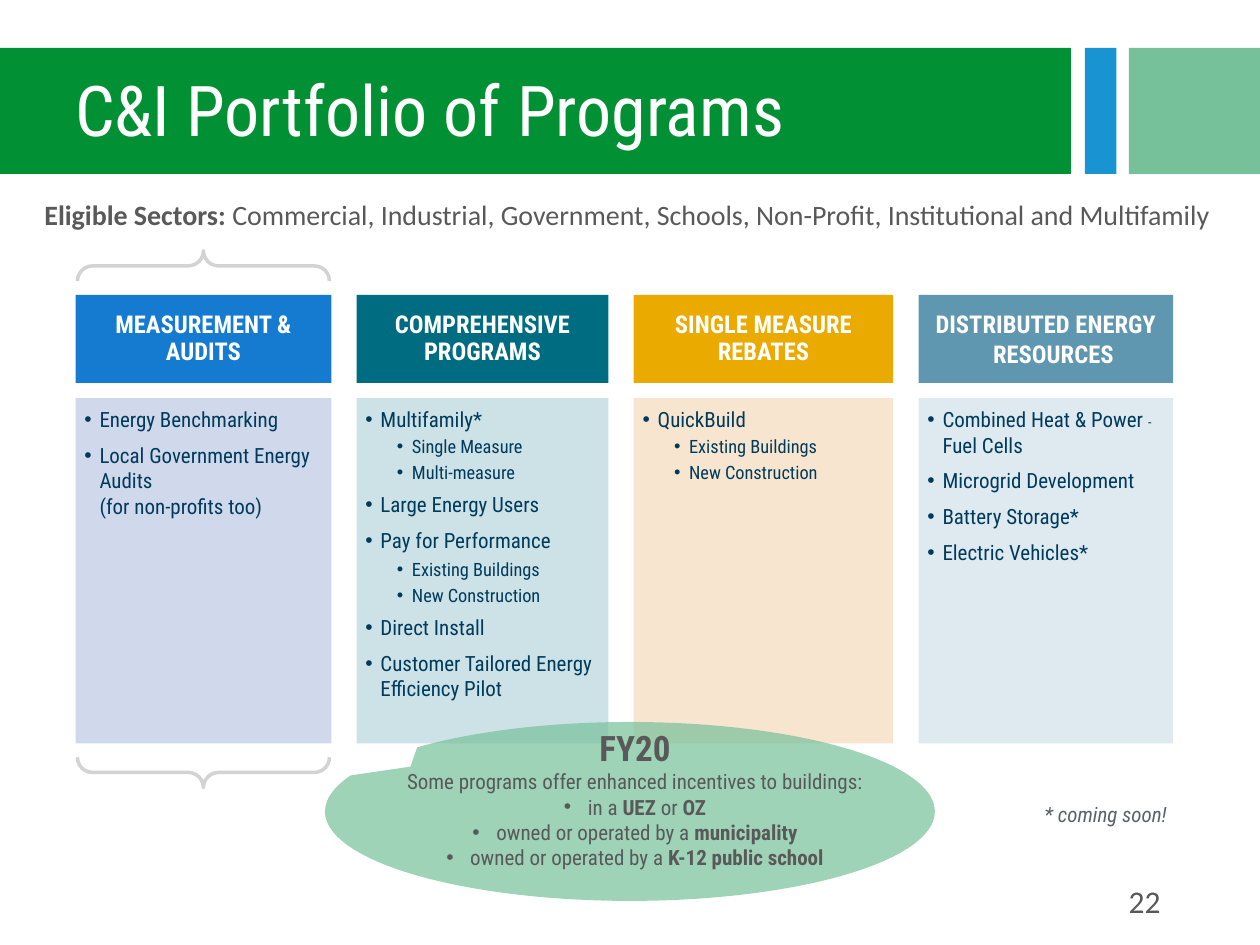
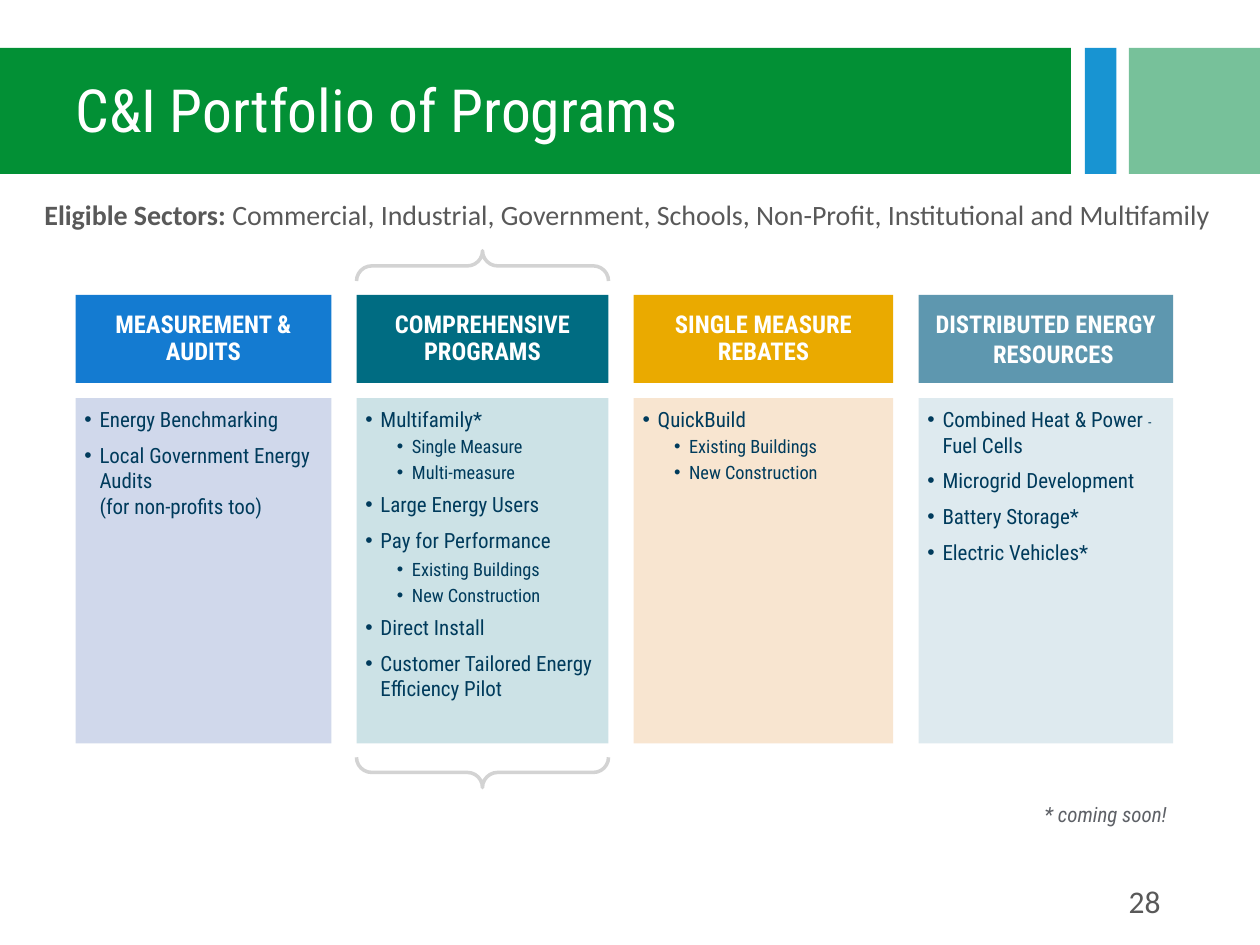
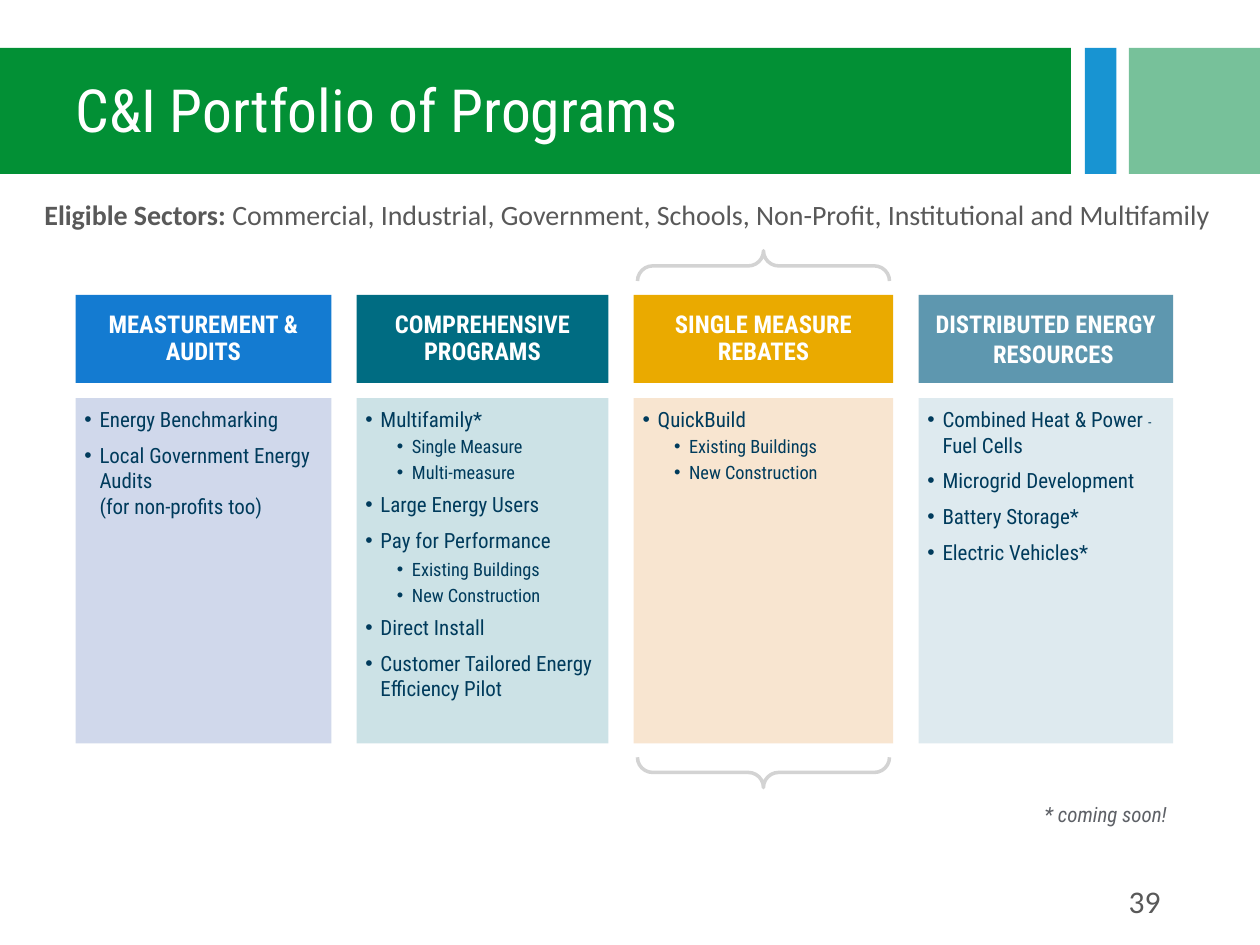
from lxml.etree import SubElement
from pptx import Presentation
from pptx.dml.color import RGBColor as RGB
from pptx.enum.shapes import MSO_SHAPE as SHAPE
from pptx.enum.text import MSO_ANCHOR as ANCHOR, PP_ALIGN as ALIGN
from pptx.oxml.ns import qn
from pptx.util import Inches, Pt

COLS, ROWS = 100, 75
COLORS = {
    "green": "029035", "blue": "1894D2", "mint": "77C19A", "white": "FFFFFF",
    "text": "595959", "note": "5E6167", "navy": "003B5C", "brace": "D3D3D3",
    "audits": "147BD1", "audits_pale": "D0D8EB",
    "programs": "006C82", "programs_pale": "CCE2E6",
    "rebates": "EAAA00", "rebates_pale": "F8E5D0",
    "energy": "5E97AF",
}
HEAD_FONT, BODY_FONT = "Roboto Condensed", "Calibri"

# Column widths in grid columns, set from the left margin with equal gaps
LEFT, GAP = 6, 2
WIDTHS = [20.3, 20, 20.6, 20.2]
LEFTS = [LEFT + sum(WIDTHS[:i]) + GAP * i for i in range(len(WIDTHS))]
HEAD_TOP, HEAD_HEIGHT = 23.4, 7
PANEL_TOP, PANEL_HEIGHT = 31.6, 27.4
BRACE_SPAN, BRACE_LENGTH = 20, 42.6

# Each item is (level, runs); a run is text or (text, format); "\n" breaks the line
HEADINGS = ["MEASUREMENT & AUDITS", "COMPREHENSIVE PROGRAMS",
            "SINGLE MEASURE REBATES", "DISTRIBUTED ENERGY RESOURCES"]
HEAD_FILLS = ["audits", "programs", "rebates", "energy"]
PANEL_FILLS = [("audits_pale", 100), ("programs_pale", 100),
               ("rebates_pale", 100), ("energy", 20)]
BUILDINGS = [(2, ["Existing Buildings"]), (2, ["New Construction"])]
PANELS = [
    [(1, ["Energy Benchmarking"]),
     (1, ["Local Government Energy Audits", "\n", "(for non-profits too)"])],
    [(1, ["Multifamily*"]), (2, ["Single Measure"]), (2, ["Multi-measure"]),
     (1, ["Large Energy Users"]), (1, ["Pay for Performance"]), *BUILDINGS,
     (1, ["Direct Install"]), (1, ["Customer Tailored Energy Efficiency Pilot"])],
    [(1, ["QuickBuild"]), *BUILDINGS],
    [(1, ["Combined Heat & Power ", ("- ", {"size": 8}), "Fuel Cells"]),
     (1, ["Microgrid Development"]), (1, ["Battery Storage*"]),
     (1, ["Electric Vehicles*"])],
]
BOLD = {"bold": True}
INCENTIVES = [
    ["in a ", ("UEZ", BOLD), " or ", ("OZ", BOLD)],
    ["owned or operated by a ", ("municipality", BOLD)],
    ["owned or operated by a ", ("K-12 public school", BOLD)],
]


class Deck:
    def __init__(self):
        self.prs = Presentation()
        self.prs.slide_width, self.prs.slide_height = Inches(10), Inches(7.5)
        self.s = None

    def new_slide(self):
        self.s = self.prs.slides.add_slide(self.prs.slide_layouts[6])

    def place(self, left, top, width, height):
        """Turn grid columns and rows into slide lengths."""
        col, row = self.prs.slide_width / COLS, self.prs.slide_height / ROWS
        return [round(n) for n in (left * col, top * row, width * col, height * row)]

    def shape(self, kind, box, fill=None, opacity=100, line=None):
        sp = self.s.shapes.add_shape(kind, *self.place(*box))
        sp.shadow.inherit = False
        if fill:
            sp.fill.solid()
            sp.fill.fore_color.rgb = RGB.from_string(COLORS[fill])
            if opacity < 100:
                clr = sp.element.spPr.find(".//" + qn("a:srgbClr"))
                SubElement(clr, qn("a:alpha"), val=str(opacity * 1000))
        else:
            sp.fill.background()
        if line:
            sp.line.color.rgb = RGB.from_string(COLORS[line])
            sp.line.width = Pt(2)
        else:
            sp.line.fill.background()
        return sp

    def frame(self, sp, anchor=ANCHOR.TOP, insets=(0.1, 0.05, 0.1, 0.05)):
        tf = sp.text_frame
        tf.word_wrap = True
        tf.vertical_anchor = anchor
        (tf.margin_left, tf.margin_top,
         tf.margin_right, tf.margin_bottom) = map(Inches, insets)
        return tf

    def text_box(self, box, **style):
        return self.frame(self.s.shapes.add_textbox(*self.place(*box)), **style)

    def paragraph(self, tf, runs, size, color="text", font=HEAD_FONT, bold=False,
                  italic=False, align=ALIGN.LEFT, indent=None, bullet=False,
                  before=0, after=0, spacing=None):
        first = tf.paragraphs[0]
        p = tf.add_paragraph() if first.runs else first
        pPr = p._p.get_or_add_pPr()
        if indent:
            margin, hang = indent
            pPr.set("marL", str(Inches(margin)))
            pPr.set("indent", str(Inches(hang)))
        if bullet:
            SubElement(pPr, qn("a:buFont"), typeface="Arial")
            SubElement(pPr, qn("a:buChar"), char="•")
        p.alignment = align
        p.space_before, p.space_after = Pt(before), Pt(after)
        if spacing:
            p.line_spacing = spacing
        for run in runs:
            if run == "\n":
                p.add_line_break()
                continue
            text, style = (run, {}) if isinstance(run, str) else run
            r = p.add_run()
            r.text = text
            r.font.name, r.font.italic = font, italic
            r.font.size = Pt(style.get("size", size))
            r.font.bold = style.get("bold", bold)
            r.font.color.rgb = RGB.from_string(COLORS[color])

    def title_band(self, title, size):
        for left, width, fill in [(86.1, 2.5, "blue"), (89.6, 10.4, "mint"),
                                  (0, 85, "green")]:
            self.shape(SHAPE.RECTANGLE, (left, 3.8, width, 10), fill)
        tf = self.text_box((0, 4, 85, 10), anchor=ANCHOR.MIDDLE)
        self.paragraph(tf, [title], size, "white", indent=(0.5, 0), spacing=0.9)

    def page_number(self, number):
        tf = self.text_box((70.6, 69.5, 22.5, 4))
        self.paragraph(tf, [str(number)], 18, font=BODY_FONT, align=ALIGN.RIGHT)

    def sectors(self):
        tf = self.text_box((0, 15.2, 99.6, 3.7))
        sectors = ("Commercial, Industrial, Government, Schools, Non-Profit, "
                   "Institutional and Multifamily")
        self.paragraph(tf, [("Eligible Sectors: ", BOLD), sectors], 16,
                       font=BODY_FONT, align=ALIGN.CENTER)

    def heading(self, column, text):
        sp = self.shape(SHAPE.RECTANGLE, (LEFTS[column], HEAD_TOP, WIDTHS[column],
                                          HEAD_HEIGHT), HEAD_FILLS[column])
        tf = self.frame(sp, ANCHOR.MIDDLE, (0.1, 0.06, 0.1, 0.06))
        last = column == len(WIDTHS) - 1
        layout = {"indent": (0.12, -0.12)} if last else {"spacing": 0.9}
        self.paragraph(tf, [text], 14, "white", bold=True, align=ALIGN.CENTER, **layout)

    def panel(self, column, items):
        sp = self.shape(SHAPE.RECTANGLE, (LEFTS[column], PANEL_TOP, WIDTHS[column],
                                          PANEL_HEIGHT), *PANEL_FILLS[column])
        tf = self.frame(sp, insets=(0.07, 0.07, 0.09, 0.1))
        for i, (level, runs) in enumerate(items):
            sub = level == 2
            leads_subs = i == 0 and items[1][0] == 2
            self.paragraph(tf, runs, 10.5 if sub else 12, "navy", bullet=True,
                           indent=(0.37 if sub else 0.12, -0.12),
                           before=0 if sub or i == 0 else 3,
                           after=2 if sub or leads_subs else 3)

    def brace(self, column):
        """Brace a column above and below with one turned brace pair."""
        middle_x = LEFTS[column] + WIDTHS[column] / 2
        middle_y = 41.2
        sp = self.shape(SHAPE.DOUBLE_BRACE,
                        (middle_x - BRACE_LENGTH / 2, middle_y - BRACE_SPAN / 2,
                         BRACE_LENGTH, BRACE_SPAN), line="brace")
        sp.rotation = 270
        sp.adjustments[0] = 0.06

    def coming_soon(self):
        tf = self.text_box((62.3, 63.1, 31.3, 3))
        self.paragraph(tf, ["* coming soon!"], 12, "note", italic=True, align=ALIGN.RIGHT)

    def incentive_callout(self):
        sp = self.shape(SHAPE.OVAL_CALLOUT, (25.8, 57.3, 48.4, 14.2), "mint", 70)
        sp.adjustments[0], sp.adjustments[1] = -0.36, -0.25
        tf = self.text_box((28.7, 57.2, 43.4, 12.5))
        self.paragraph(tf, ["FY20"], 20, bold=True, align=ALIGN.CENTER)
        self.paragraph(tf, ["Some programs offer enhanced incentives to buildings:"],
                       12, align=ALIGN.CENTER)
        for runs in INCENTIVES:
            self.paragraph(tf, runs, 12, align=ALIGN.CENTER, indent=(0.19, -0.19),
                           bullet=True)

    def portfolio(self, number, braced, title_size=34, headings=HEADINGS):
        self.new_slide()
        self.title_band("C&I Portfolio of Programs", title_size)
        self.page_number(number)
        self.sectors()
        for column, (text, items) in enumerate(zip(headings, PANELS)):
            self.panel(column, items)
            self.heading(column, text)
        self.brace(braced)
        self.coming_soon()


def main():
    deck = Deck()
    deck.portfolio(22, braced=0, title_size=40)
    deck.incentive_callout()
    deck.portfolio(28, braced=1)
    deck.portfolio(39, braced=2, headings=["MEASTUREMENT & AUDITS", *HEADINGS[1:]])
    deck.prs.save("out.pptx")


if __name__ == "__main__":
    main()
